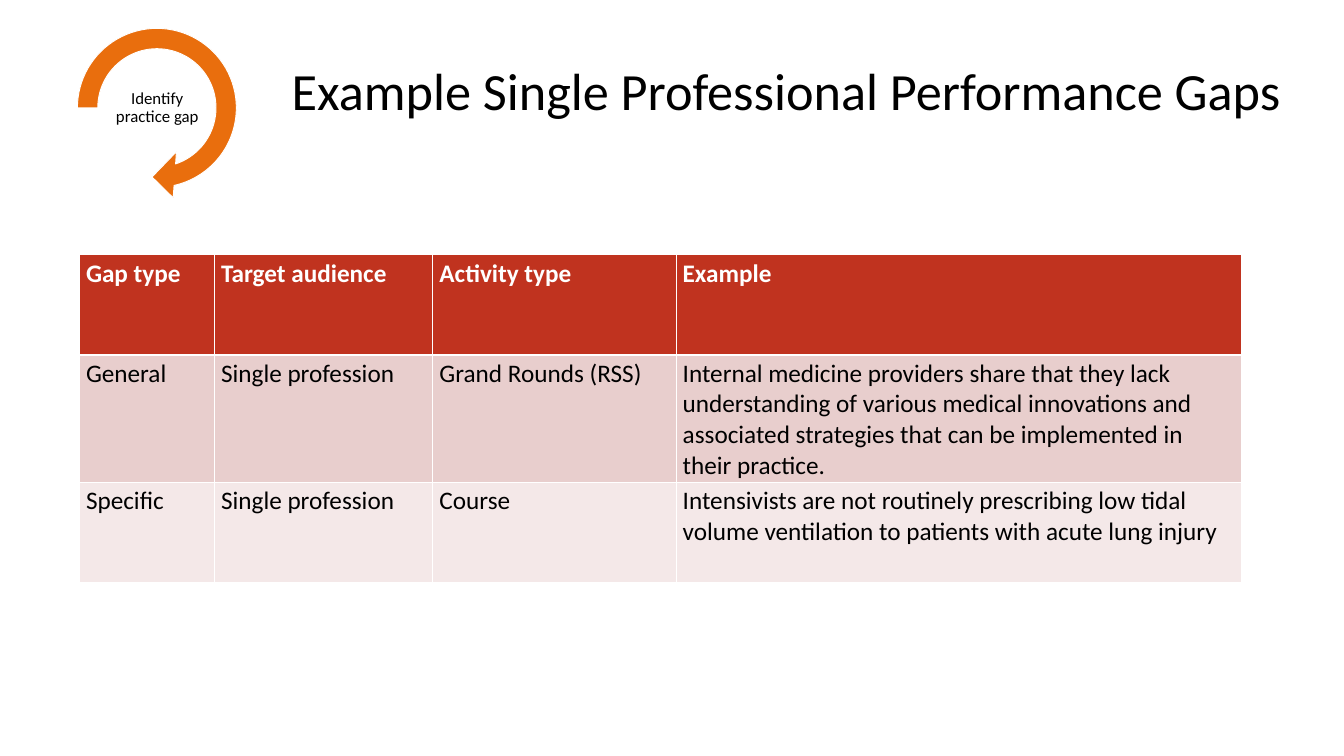
from dataclasses import dataclass

from lxml import etree
from pptx import Presentation
from pptx.dml.color import RGBColor
from pptx.enum.shapes import MSO_SHAPE
from pptx.enum.text import MSO_ANCHOR, PP_ALIGN
from pptx.oxml.ns import qn
from pptx.util import Emu, Pt

PX = 9144  # 100 px to the inch
FONT = "Calibri"
CENTER = PP_ALIGN.CENTER
MIDDLE = MSO_ANCHOR.MIDDLE
CIRCULAR_ARROW = MSO_SHAPE.CIRCULAR_ARROW
COLORS = {
    "text": "000000",
    "white": "FFFFFF",
    "arrow": "E96E0D",
    "header": "C0331F",
    "general": "E8CECD",
    "specific": "F4E8E8",
}


@dataclass(frozen=True)
class Area:
    left: int
    top: int
    width: int
    height: int

    def emu(self) -> list[Emu]:
        return [px(n) for n in (self.left, self.top, self.width, self.height)]


@dataclass(frozen=True)
class Label:
    text: str
    area: Area
    size: int
    margin: int


@dataclass(frozen=True)
class GapRow:
    cells: tuple[str, ...]
    fill: str
    color: str = "text"
    bold: bool = False
    bottom_line: int = 1


LABELS = (
    Label("Example Single Professional Performance Gaps", Area(367, 94, 1607, 89), 56, 10),
    Label("Identify practice gap", Area(157, 122, 154, 77), 18, 1),
)
ARROW_AREA = Area(96, 23, 275, 275)
ARROW_ADJUSTMENTS = (0.11, 11.42, 45, 108, 0.125)
TABLE_LEFT, TABLE_TOP, ROW_HEIGHT = 118, 379, 149
COLUMN_WIDTHS = (201, 325, 362, 842)
GAP_ROWS = (
    GapRow(("Gap type", "Target audience", "Activity type", "Example"),
           "header", "white", True, 3),
    GapRow(("General", "Single profession", "Grand Rounds (RSS)",
            "Internal medicine providers share that they lack understanding of various "
            "medical innovations and associated strategies that can be implemented in "
            "their practice."), "general"),
    GapRow(("Specific", "Single profession", "Course",
            "Intensivists are not routinely prescribing low tidal volume ventilation "
            "to patients with acute lung injury"), "specific"),
)


def px(length: int) -> Emu:
    return Emu(length * PX)


def rgb(name: str) -> RGBColor:
    return RGBColor.from_string(COLORS[name])


def style_text(frame, size: int, color: str = "text", bold: bool = False) -> None:
    for para in frame.paragraphs:
        for span in para.runs:
            span.font.name = FONT
            span.font.size = Pt(size)
            span.font.bold = bold
            span.font.color.rgb = rgb(color)


def add_label(page, label: Label) -> None:
    box = page.shapes.add_textbox(*label.area.emu())
    frame = box.text_frame
    frame.word_wrap = True
    frame.vertical_anchor = MIDDLE
    frame.margin_left = frame.margin_right = px(label.margin)
    frame.margin_top = frame.margin_bottom = px(min(label.margin, 5))
    frame.text = label.text
    frame.paragraphs[0].alignment = CENTER
    frame.paragraphs[0].line_spacing = 0.9
    style_text(frame, label.size)


def add_cycle_arrow(page) -> None:
    arrow = page.shapes.add_shape(CIRCULAR_ARROW, *ARROW_AREA.emu())
    for index, value in enumerate(ARROW_ADJUSTMENTS):
        arrow.adjustments[index] = value
    arrow.shadow.inherit = False
    arrow.fill.solid()
    arrow.fill.fore_color.rgb = rgb("arrow")
    arrow.line.color.rgb = rgb("white")
    arrow.line.width = Pt(1)


def add_borders(cell, widths: dict[str, int]) -> None:
    """Draw white cell borders; they must precede the fill in the XML."""
    properties = cell._tc.get_or_add_tcPr()
    for side, width in widths.items():
        line = etree.SubElement(properties, qn(f"a:ln{side}"), w=str(Pt(width)))
        fill = etree.SubElement(line, qn("a:solidFill"))
        etree.SubElement(fill, qn("a:srgbClr"), val=COLORS["white"])


def add_gap_table(page) -> None:
    area = Area(TABLE_LEFT, TABLE_TOP, sum(COLUMN_WIDTHS), ROW_HEIGHT * len(GAP_ROWS))
    table = page.shapes.add_table(len(GAP_ROWS), len(COLUMN_WIDTHS), *area.emu()).table
    for column, width in zip(table.columns, COLUMN_WIDTHS):
        column.width = px(width)
    top_line = 1
    for row, gap in zip(table.rows, GAP_ROWS):
        row.height = px(ROW_HEIGHT)
        for cell, text in zip(row.cells, gap.cells):
            add_borders(cell, {"L": 1, "R": 1, "T": top_line, "B": gap.bottom_line})
            cell.fill.solid()
            cell.fill.fore_color.rgb = rgb(gap.fill)
            cell.text_frame.text = text
            style_text(cell.text_frame, 27, gap.color, gap.bold)
        top_line = gap.bottom_line


def main() -> None:
    deck = Presentation()
    deck.slide_width, deck.slide_height = px(2000), px(1125)
    page = deck.slides.add_slide(deck.slide_layouts[6])
    add_cycle_arrow(page)
    for label in LABELS:
        add_label(page, label)
    add_gap_table(page)
    deck.save("out.pptx")


if __name__ == "__main__":
    main()
